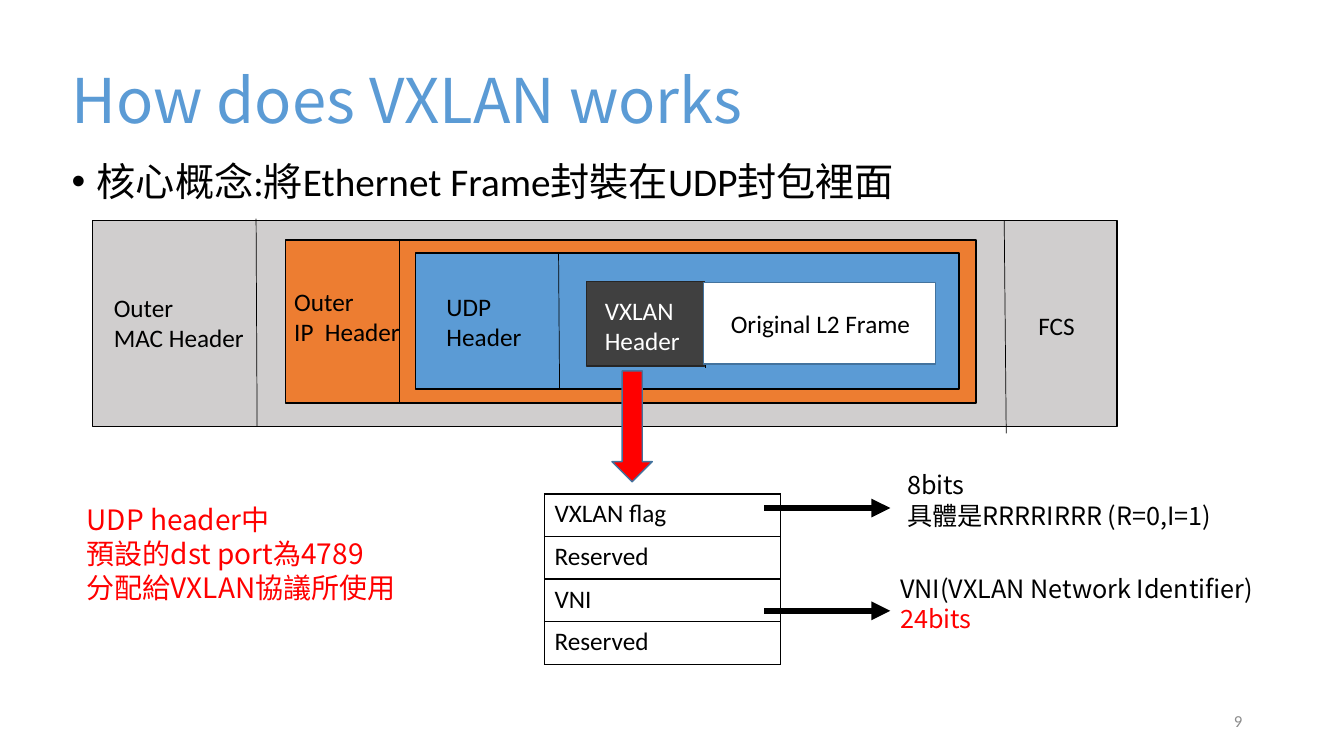
from dataclasses import dataclass

from pptx import Presentation
from pptx import util as u
from pptx.dml.color import RGBColor
from pptx.enum import shapes, text
from pptx.oxml import parse_xml
from pptx.oxml.ns import nsdecls
from pptx.oxml.xmlchemy import OxmlElement

PX = 9144  # EMU per px, 100 px to the inch


@dataclass(frozen=True)
class Theme:
    latin: str = "Calibri"
    cjk: str = "Noto Sans CJK SC"
    black: str = "000000"
    white: str = "FFFFFF"
    red: str = "FF0000"
    blue: str = "5B9BD5"
    blue_edge: str = "43739E"
    orange: str = "ED7D31"
    gray: str = "D0CECE"
    dark: str = "404040"
    dark_edge: str = "262626"
    page_gray: str = "8C8C8C"
    title_size: int = 44
    body_size: int = 28
    note_size: int = 20
    label_size: int = 18
    page_size: int = 12


THEME = Theme()


@dataclass(frozen=True)
class Area:
    left: int
    top: int
    width: int
    height: int

    def emu(self) -> list[int]:
        return [px(side) for side in (self.left, self.top, self.width, self.height)]


@dataclass(frozen=True)
class Box:
    area: Area
    fill: str
    edge: str = THEME.black
    preset: shapes.MSO_SHAPE = shapes.MSO_SHAPE.RECTANGLE


@dataclass(frozen=True)
class Line:
    start: tuple[int, int]
    end: tuple[int, int]
    width: float = 0.5
    arrow: bool = False


@dataclass(frozen=True)
class Label:
    area: Area
    words: str
    color: str = THEME.black
    size: int = THEME.label_size
    font: str = THEME.latin
    last_color: str | None = None


def px(length: int) -> int:
    return u.Emu(length * PX)


def rgb(color: str) -> RGBColor:
    return RGBColor.from_string(color)


def format_runs(paragraph, size: int, color: str, font: str) -> None:
    for run in paragraph.runs:
        run.font.size = u.Pt(size)
        run.font.color.rgb = rgb(color)
        run.font.name = font
        east_asian = OxmlElement("a:ea")
        east_asian.set("typeface", THEME.cjk)
        run.font._element.append(east_asian)


def draw_box(slide, box: Box) -> None:
    shape = slide.shapes.add_shape(box.preset, *box.area.emu())
    shape.shadow.inherit = False
    shape.fill.solid()
    shape.fill.fore_color.rgb = rgb(box.fill)
    shape.line.color.rgb = rgb(box.edge)
    shape.line.width = u.Pt(1)


def draw_line(slide, line: Line) -> None:
    ends = [px(value) for value in (*line.start, *line.end)]
    connector = slide.shapes.add_connector(shapes.MSO_CONNECTOR.STRAIGHT, *ends)
    connector.line.color.rgb = rgb(THEME.black)
    connector.line.width = u.Pt(line.width)
    if line.arrow:
        head = OxmlElement("a:tailEnd")
        head.set("type", "triangle")
        connector.line._get_or_add_ln().append(head)
    connector._element.spPr.append(OxmlElement("a:effectLst"))


def draw_label(slide, label: Label):
    frame = slide.shapes.add_textbox(*label.area.emu()).text_frame
    frame.word_wrap = True
    frame.text = label.words
    for paragraph in frame.paragraphs:
        format_runs(paragraph, label.size, label.color, label.font)
    if label.last_color:
        for run in frame.paragraphs[-1].runs:
            run.font.color.rgb = rgb(label.last_color)
    return frame


def fill_placeholder(shape, label: Label):
    shape.left, shape.top, shape.width, shape.height = label.area.emu()
    frame = shape.text_frame
    frame.text = label.words
    frame.auto_size = text.MSO_AUTO_SIZE.NONE
    paragraph = frame.paragraphs[0]
    paragraph.alignment = text.PP_ALIGN.LEFT
    paragraph.line_spacing = 0.9
    format_runs(paragraph, label.size, label.color, label.font)
    return frame


def draw_fields(slide, area: Area, fields: tuple[str, ...]) -> None:
    table = slide.shapes.add_table(len(fields), 1, *area.emu()).table
    for row, field in enumerate(fields):
        cell = table.cell(row, 0)
        cell.text = field
        format_runs(cell.text_frame.paragraphs[0], THEME.label_size, THEME.black, THEME.latin)
        properties = cell._tc.get_or_add_tcPr()
        for side in ("lnL", "lnR", "lnT", "lnB"):
            properties.append(parse_xml(
                f'<a:{side} {nsdecls("a")} w="12700"><a:solidFill>'
                f'<a:srgbClr val="{THEME.black}"/></a:solidFill></a:{side}>'))
        cell.fill.solid()
        cell.fill.fore_color.rgb = rgb(THEME.white)


# Packet diagram, from the outer frame inwards
LAYERS = (
    Box(Area(92, 219, 1016, 204), THEME.gray),
    Box(Area(283, 238, 685, 162), THEME.orange),
    Box(Area(412, 251, 539, 135), THEME.blue),
)
DIVIDERS = (
    Line((254, 217), (255, 423)),
    Line((996, 219), (998, 430)),
    Line((396, 237), (396, 401)),
    Line((554, 251), (555, 386)),
    Line((700, 281), (700, 365)),
)
PAYLOAD = (
    Box(Area(582, 279, 117, 84), THEME.dark, THEME.dark_edge),
    Box(Area(698, 280, 230, 81), THEME.white, THEME.blue_edge),
    Box(Area(607, 368, 40, 110), THEME.red, THEME.blue_edge, shapes.MSO_SHAPE.DOWN_ARROW),
)
LABELS = (
    Label(Area(103, 285, 158, 71), "Outer\nMAC Header"),
    Label(Area(282, 279, 146, 71), "Outer\nIP  Header"),
    Label(Area(433, 284, 105, 71), "UDP Header"),
    Label(Area(590, 288, 105, 71), "VXLAN\nHeader", THEME.white),
    Label(Area(715, 301, 211, 40), "Original L2 Frame"),
    Label(Area(1020, 303, 158, 40), "FCS"),
    Label(Area(890, 461, 401, 71), "8bits\n具體是RRRRIRRR (R=0,I=1)", font=THEME.cjk),
    Label(Area(883, 564, 401, 71), "VNI(VXLAN Network Identifier)\n24bits",
          font=THEME.cjk, last_color=THEME.red),
    Label(Area(76, 494, 480, 111), "UDP header中\n預設的dst port為4789\n分配給VXLAN協議所使用",
          THEME.red, THEME.note_size, THEME.cjk),
)
FIELDS = ("VXLAN flag", "Reserved", "VNI", "Reserved")
FIELD_ARROWS = tuple(Line((758, y), (883, y), 4.5, True) for y in (504, 606))
TITLE = Label(Area(61, 30, 1150, 145), "How does VXLAN works",
              THEME.blue, THEME.title_size, THEME.cjk)
BODY = Label(Area(61, 156, 1150, 476), "核心概念:將Ethernet Frame封裝在UDP封包裡面",
             size=THEME.body_size)
PAGE = Label(Area(942, 695, 300, 40), "9", THEME.page_gray, THEME.page_size)


def main() -> None:
    presentation = Presentation()
    presentation.slide_width, presentation.slide_height = px(1333), px(750)
    slide = presentation.slides.add_slide(presentation.slide_layouts[1])

    # Title and bullet
    title = fill_placeholder(slide.shapes.title, TITLE)
    title.vertical_anchor = text.MSO_ANCHOR.MIDDLE
    bullet = fill_placeholder(slide.placeholders[1], BODY).paragraphs[0]
    bullet.space_before = u.Pt(10)
    properties = bullet._p.get_or_add_pPr()
    properties.set("marL", str(px(25)))
    properties.set("indent", str(-px(25)))

    # Nested packet, header fields and their notes
    for box in LAYERS:
        draw_box(slide, box)
    for line in DIVIDERS:
        draw_line(slide, line)
    for box in PAYLOAD:
        draw_box(slide, box)
    draw_fields(slide, Area(540, 490, 234, 169), FIELDS)
    for line in FIELD_ARROWS:
        draw_line(slide, line)
    for label in LABELS:
        draw_label(slide, label)

    # Page number
    page = draw_label(slide, PAGE)
    page.vertical_anchor = text.MSO_ANCHOR.MIDDLE
    page.paragraphs[0].alignment = text.PP_ALIGN.RIGHT

    presentation.save("out.pptx")


if __name__ == "__main__":
    main()
